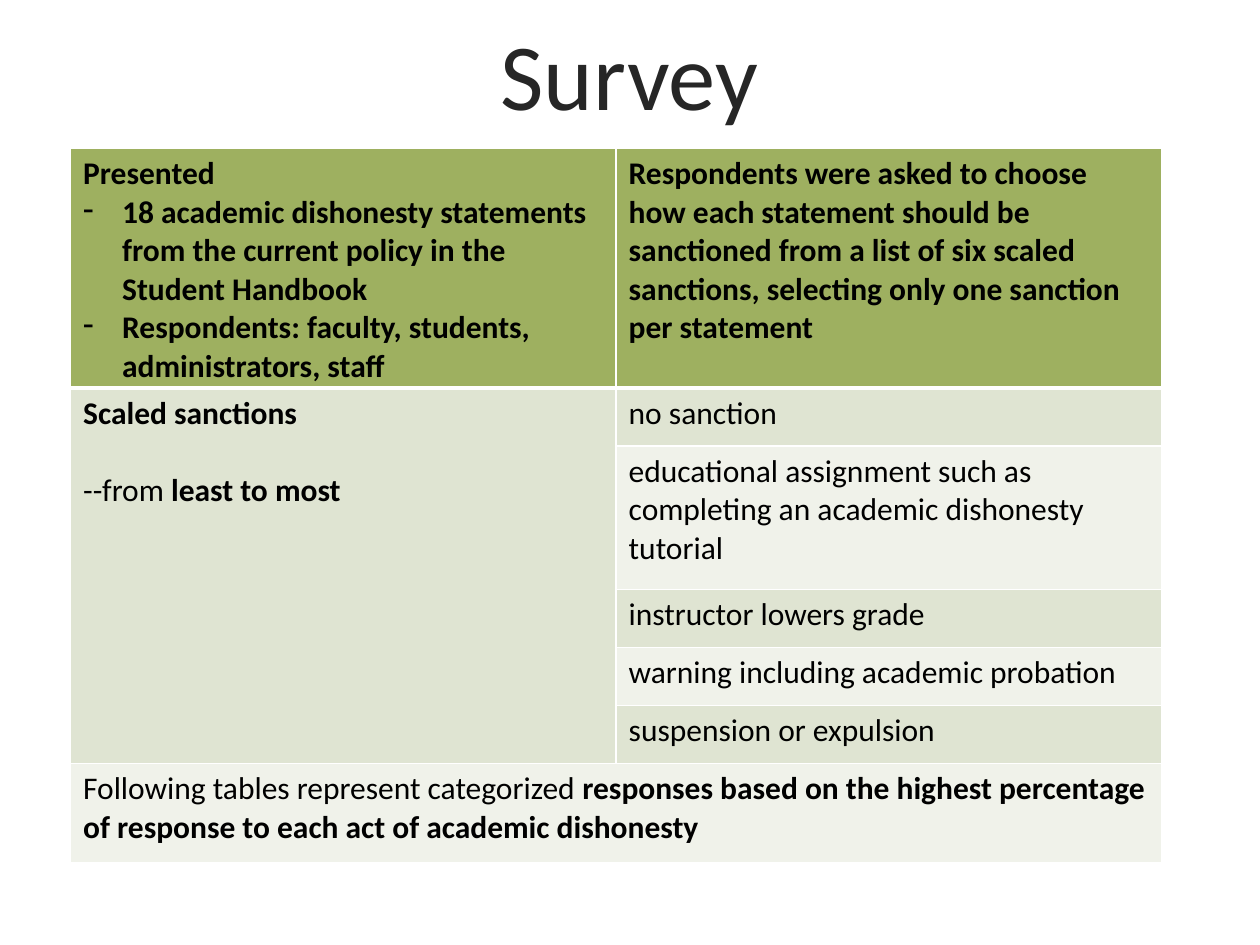
"""Build the survey slide: a title above a table of scaled sanctions."""
from pptx import Presentation
from pptx.dml.color import RGBColor
from pptx.enum import text
from pptx.oxml import parse_xml
from pptx.oxml import ns
from pptx.util import Inches, Pt

BLACK = RGBColor(0x00, 0x00, 0x00)
CHARCOAL = RGBColor(0x26, 0x26, 0x26)
WHITE = RGBColor(0xFF, 0xFF, 0xFF)
OLIVE = RGBColor(0x9E, 0xB0, 0x60)
SAGE = RGBColor(0xDF, 0xE4, 0xD2)
PALE = RGBColor(0xF0, 0xF2, 0xEA)

FONT = "Calibri"
TITLE = "Survey"
TITLE_FORMAT = {"name": FONT, "size": Pt(54)}
CELL_FORMAT = {"name": FONT, "size": Pt(18)}
BULLET_INDENT = Inches(0.31)
LINE_GAP = Pt(22)
THIN, THICK = Pt(1), Pt(3)

COLUMN_WIDTHS = [4.33, 4.33]
ROW_HEIGHTS = [1.82, 0.46, 1.14, 0.46, 0.46, 0.46, 0.79]
ROW_FILLS = [OLIVE, SAGE, PALE, SAGE, PALE, SAGE, PALE]
MERGES = [((1, 0), (5, 0)), ((6, 0), (6, 1))]

SANCTIONS = [
    "no sanction",
    "educational assignment such as completing an academic dishonesty tutorial",
    "instructor lowers grade",
    "warning including academic probation",
    "suspension or expulsion",
]

CELLS = {
    (0, 0): [
        {"spans": [("Presented", True)]},
        {"spans": [("18 academic dishonesty statements from the current policy "
                    "in the Student Handbook", True)], "bullet": "-"},
        {"spans": [("Respondents: faculty, students, administrators, staff", True)],
         "bullet": "-"},
    ],
    (0, 1): [
        {"spans": [("Respondents were asked to choose how each statement should be "
                    "sanctioned from a list of six scaled sanctions, selecting only "
                    "one sanction per statement", True)]},
    ],
    (1, 0): [
        {"spans": [("Scaled sanctions", True)]},
        {"spans": [("--from ", False), ("least to most", True)], "before": LINE_GAP},
    ],
    (6, 0): [
        {"spans": [("Following tables represent categorized ", False),
                   ("responses based on the highest percentage of response to each "
                    "act of academic dishonesty", True)]},
    ],
}
CELLS.update({(row, 1): [{"spans": [(sanction, False)]}]
              for row, sanction in enumerate(SANCTIONS, 1)})


def add_span(para, wording, color, formats):
    span = para.add_run()
    span.text = wording
    span.font.color.rgb = color
    for name, value in formats.items():
        setattr(span.font, name, value)


def add_bullet(para, mark):
    properties = para._p.get_or_add_pPr()
    properties.set("marL", str(BULLET_INDENT))
    properties.set("indent", str(-BULLET_INDENT))
    properties.append(parse_xml(f'<a:buChar {ns.nsdecls("a")} char="{mark}"/>'))


def set_borders(cell, widths):
    properties = cell._tc.get_or_add_tcPr()
    for position, (side, width) in enumerate(widths.items()):
        properties.insert(position, parse_xml(
            f'<a:ln{side} {ns.nsdecls("a")} w="{width}"><a:solidFill>'
            f'<a:srgbClr val="{WHITE}"/></a:solidFill></a:ln{side}>'))


def fill_text(cell, paragraphs):
    frame = cell.text_frame
    for index, content in enumerate(paragraphs):
        para = frame.add_paragraph() if index else frame.paragraphs[0]
        if "before" in content:
            para.space_before = content["before"]
        if "bullet" in content:
            add_bullet(para, content["bullet"])
        for wording, bold in content["spans"]:
            add_span(para, wording, BLACK, {**CELL_FORMAT, "bold": bold})


def add_title(page):
    box = page.shapes.add_textbox(Inches(0.79), Inches(0.14), Inches(8.41), Inches(0.88))
    frame = box.text_frame
    for name, value in {"word_wrap": True,
                        "vertical_anchor": text.MSO_ANCHOR.MIDDLE}.items():
        setattr(frame, name, value)
    para = frame.paragraphs[0]
    para.alignment = text.PP_ALIGN.CENTER
    add_span(para, TITLE, CHARCOAL, TITLE_FORMAT)


def add_sanction_table(page):
    table = page.shapes.add_table(
        len(ROW_HEIGHTS), len(COLUMN_WIDTHS), Inches(0.56), Inches(1.18),
        Inches(sum(COLUMN_WIDTHS)), Inches(sum(ROW_HEIGHTS))).table
    for column, width in zip(table.columns, COLUMN_WIDTHS):
        column.width = Inches(width)
    for index, (row, height) in enumerate(zip(table.rows, ROW_HEIGHTS)):
        row.height = Inches(height)
        for cell in row.cells:
            cell.fill.solid()
            cell.fill.fore_color.rgb = ROW_FILLS[index]
            set_borders(cell, {"L": THIN, "R": THIN,
                               "T": THICK if index == 1 else THIN,
                               "B": THICK if index == 0 else THIN})
    for first, last in MERGES:
        table.cell(*first).merge(table.cell(*last))
    for place, paragraphs in CELLS.items():
        fill_text(table.cell(*place), paragraphs)
    for column in range(len(COLUMN_WIDTHS)):
        table.cell(1, column).fill.fore_color.rgb = SAGE


def main():
    deck = Presentation()
    deck.slide_width, deck.slide_height = Inches(10), Inches(7.5)
    page = deck.slides.add_slide(deck.slide_layouts[6])
    add_title(page)
    add_sanction_table(page)
    deck.save("out.pptx")


if __name__ == "__main__":
    main()
